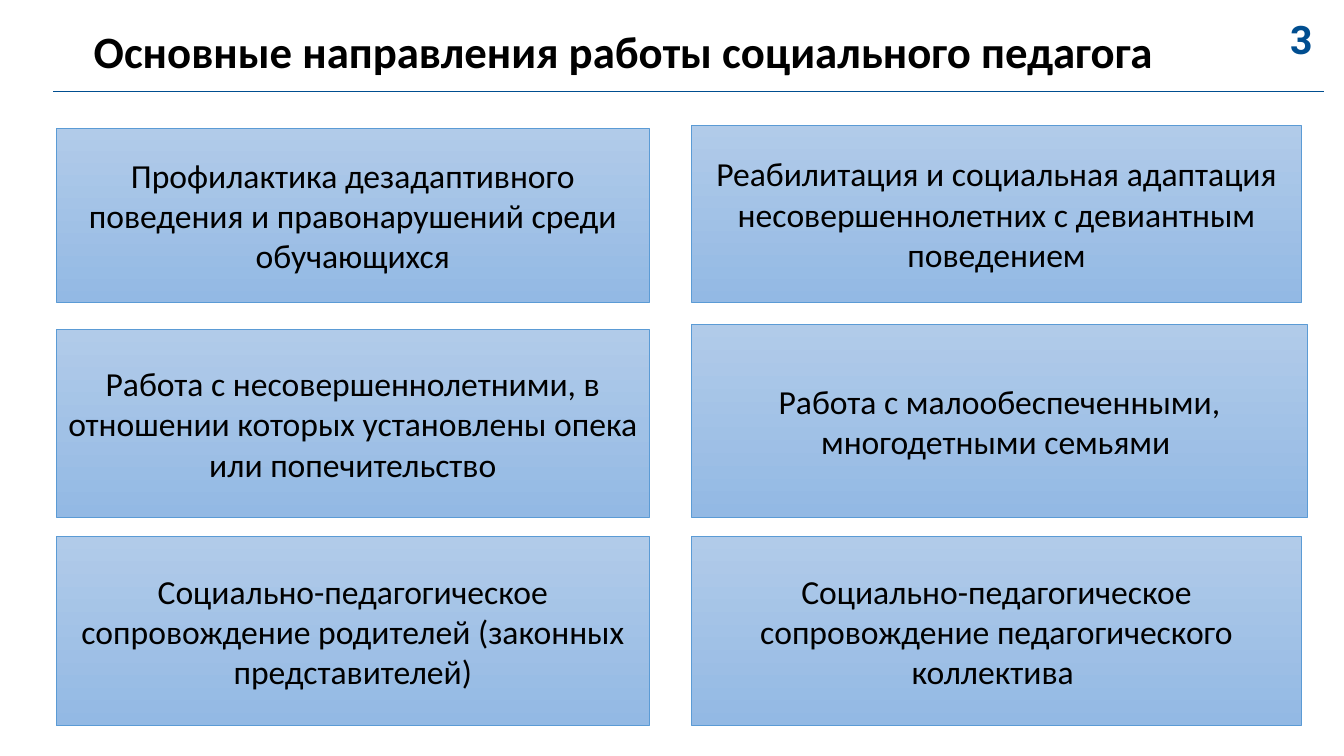
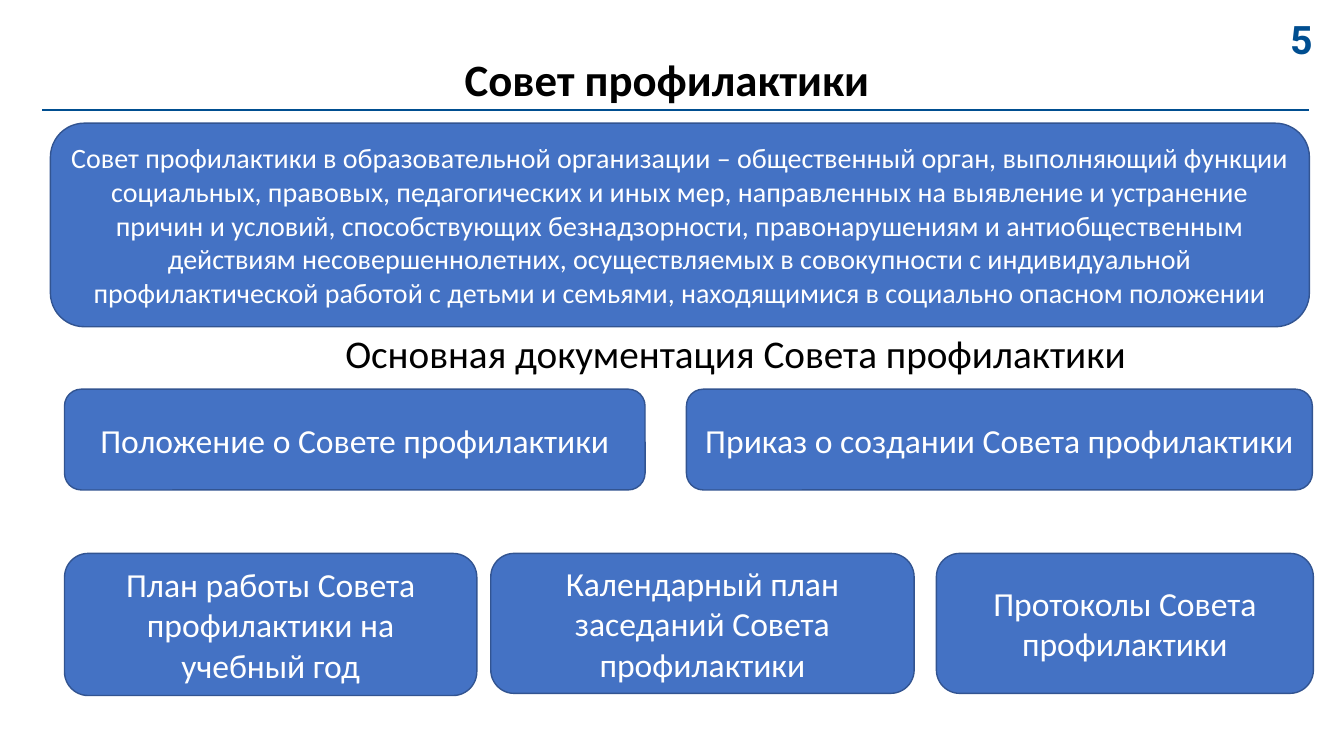
from lxml import etree
from pptx import Presentation
from pptx.dml.color import RGBColor
from pptx.enum.shapes import MSO_CONNECTOR, MSO_SHAPE
from pptx.enum.text import MSO_ANCHOR, MSO_AUTO_SIZE, PP_ALIGN
from pptx.oxml.ns import qn
from pptx.util import Pt

LEFT, CENTER = PP_ALIGN.LEFT, PP_ALIGN.CENTER
MIDDLE = MSO_ANCHOR.MIDDLE
NO_FIT = MSO_AUTO_SIZE.NONE
RECT, ROUND = MSO_SHAPE.RECTANGLE, MSO_SHAPE.ROUNDED_RECTANGLE
STRAIGHT = MSO_CONNECTOR.STRAIGHT

TITLE_ONLY = 5
FONT, NUM_FONT = "Calibri", "Roboto"
BLACK, WHITE, NAVY = "000000", "FFFFFF", "004E90"
SKY_TOP, SKY_END, SKY_EDGE = "B1CBE9", "93B9E4", "5B9BD5"
BLUE, BLUE_EDGE = "4472C4", "325491"


def color(code):
    return RGBColor.from_string(code)


def write(shape, text, size, ink, font=FONT, bold=False, align=CENTER, space=1.0):
    frame = shape.text_frame
    frame.word_wrap = True
    frame.auto_size = NO_FIT
    frame.vertical_anchor = MIDDLE
    para = frame.paragraphs[0]
    para.alignment = align
    para.line_spacing = space
    run = para.add_run()
    run.text = text
    run.font.name = font
    run.font.size = Pt(size)
    run.font.bold = bold
    run.font.color.rgb = color(ink)


def add_label(slide, box, text, size, ink, **style):
    label = slide.shapes.add_textbox(*map(Pt, box))
    write(label, text, size, ink, space=0.9, **style)


def add_panel(slide, kind, box, edge, width):
    panel = slide.shapes.add_shape(kind, *map(Pt, box))
    panel.shadow.inherit = False
    panel.line.color.rgb = color(edge)
    panel.line.width = Pt(width)
    return panel


def add_sky(slide, box, text):
    """Square panel with a pale gradient running downwards."""
    panel = add_panel(slide, RECT, box, SKY_EDGE, 0.5)
    panel.fill.gradient()
    panel.fill.gradient_angle = 270
    for stop, code in zip(panel.fill.gradient_stops, (SKY_TOP, SKY_END)):
        stop.color.rgb = color(code)
    write(panel, text, 24, BLACK)


def add_card(slide, box, text, size=24):
    """Rounded panel in solid blue."""
    card = add_panel(slide, ROUND, box, BLUE_EDGE, 1)
    card.fill.solid()
    card.fill.fore_color.rgb = color(BLUE)
    write(card, text, size, WHITE)


def add_rule(slide, left, right, top):
    rule = slide.shapes.add_connector(STRAIGHT, Pt(left), Pt(top), Pt(right), Pt(top))
    rule.line.color.rgb = color(NAVY)
    rule.line.width = Pt(1)
    etree.SubElement(rule._element.spPr, qn("a:effectLst"))


def start_slide(deck, title, box, number, rule):
    """Add a slide with its title, page number and rule."""
    slide = deck.slides.add_slide(deck.slide_layouts[TITLE_ONLY])
    head = slide.shapes.title
    head.left, head.top, head.width, head.height = map(Pt, box)
    write(head, title, 32, BLACK, bold=True, space=0.9)
    add_label(slide, (914.4, 20.9, 23, 18), number, 28, NAVY,
              font=NUM_FONT, bold=True, align=LEFT)
    add_rule(slide, *rule)
    return slide


def build_tasks(deck):
    slide = start_slide(deck, "Основные направления работы социального педагога",
                        (30.2, 12.2, 831, 53.3), "3", (38.2, 945.4, 65.5))
    left, right = 40.3, 494
    wide, wider = 423.4, 435.6
    tasks = [
        ((left, 91.5, wide, 124.5),
         "Профилактика дезадаптивного поведения и правонарушений среди обучающихся"),
        ((right, 89.2, wider, 126.8),
         "Реабилитация и социальная адаптация несовершеннолетних с девиантным поведением"),
        ((left, 235.5, wide, 134),
         "Работа с несовершеннолетними, в отношении которых установлены опека "
         "или попечительство"),
        ((right, 231.8, 440, 137.7), "Работа с малообеспеченными, многодетными семьями "),
        ((left, 383, wide, 135.4),
         "Социально-педагогическое сопровождение родителей (законных представителей)"),
        ((right, 383, wider, 135.4),
         "Социально-педагогическое сопровождение педагогического коллектива "),
    ]
    for box, text in tasks:
        add_sky(slide, box, text)


def build_council(deck):
    slide = start_slide(deck, "Совет профилактики ", (66.2, 28.8, 828, 59),
                        "5", (30.2, 935.3, 78.5))
    add_card(slide, (36, 88, 899.3, 145.4),
             "Совет профилактики в образовательной организации – общественный орган, "
             "выполняющий функции социальных, правовых, педагогических и иных мер, "
             "направленных на выявление и устранение причин и условий, способствующих "
             "безнадзорности, правонарушениям и антиобщественным действиям "
             "несовершеннолетних, осуществляемых в совокупности с индивидуальной "
             "профилактической работой с детьми и семьями, находящимися в социально "
             "опасном положении", 20)
    add_label(slide, (75.6, 234, 899.3, 40),
              "Основная документация Совета профилактики", 28, BLACK)
    upper, lower = 278, 395.3
    papers = [
        ((46.1, upper, 414.7, 72), "Положение о Совете профилактики"),
        ((490.3, upper, 447.1, 72), "Приказ о создании Совета профилактики"),
        ((46.1, lower, 294.5, 101.5), "План работы Совета профилактики на учебный год"),
        ((350.6, lower, 302.4, 100), "Календарный план заседаний Совета профилактики"),
        ((668.9, lower, 269.3, 100), "Протоколы Совета профилактики"),
    ]
    for box, text in papers:
        add_card(slide, box, text)


def main():
    deck = Presentation()
    deck.slide_width, deck.slide_height = Pt(960), Pt(540)
    build_tasks(deck)
    build_council(deck)
    deck.save("out.pptx")


if __name__ == "__main__":
    main()
